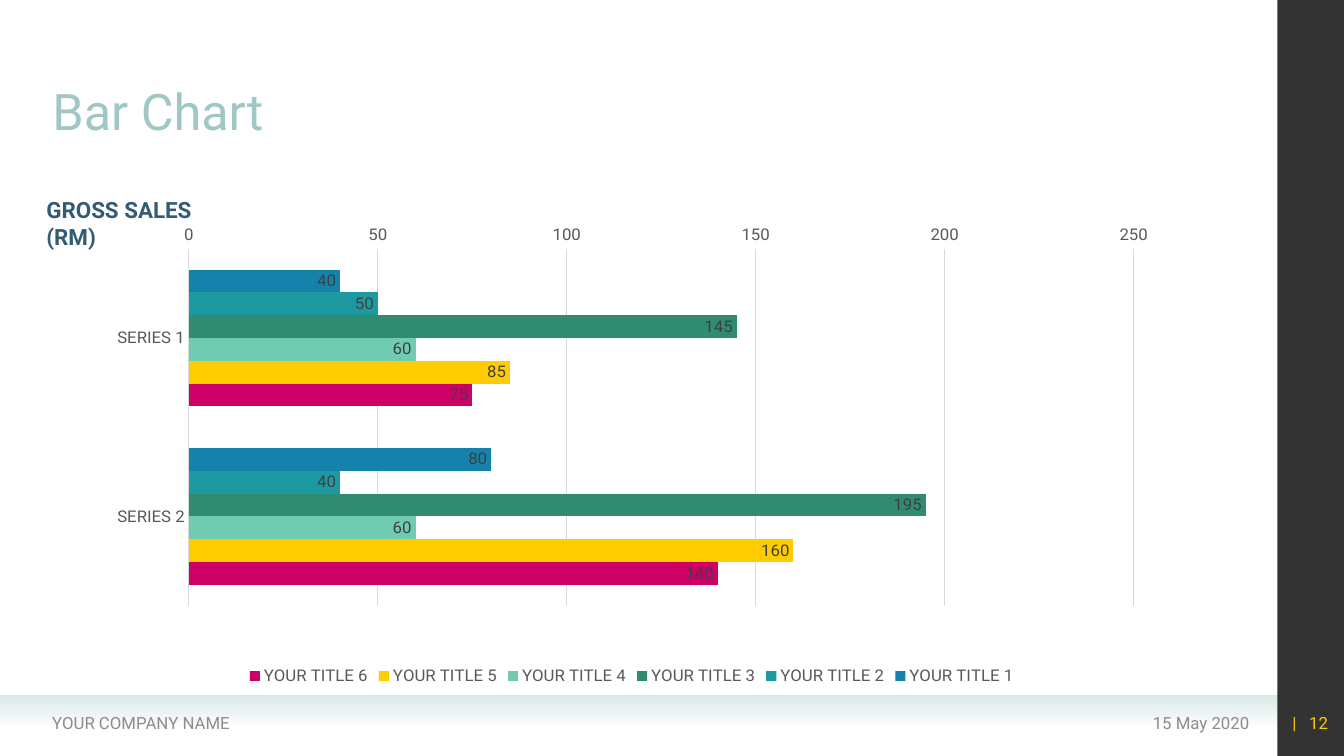
from lxml.etree import SubElement
from pptx import Presentation
from pptx.chart.data import CategoryChartData
from pptx.dml.color import RGBColor
from pptx.enum.chart import (XL_AXIS_CROSSES, XL_CHART_TYPE, XL_LABEL_POSITION,
                             XL_LEGEND_POSITION, XL_TICK_MARK)
from pptx.enum.shapes import MSO_SHAPE
from pptx.enum.text import MSO_ANCHOR, MSO_AUTO_SIZE, PP_ALIGN
from pptx.oxml import parse_xml
from pptx.oxml.ns import nsdecls, qn
from pptx.util import Inches, Pt

COLORS = {
    "title": "A0C7C5", "heading": "335B74", "footer": "8C8C8C", "number": "FFCC00",
    "band": "D9E9E8", "panel": "000000", "grid": "D9D9D9", "axis": "595959", "label": "404040",
}
SALES = {
    "YOUR TITLE 1": ((40, 80), "1482AB"),
    "YOUR TITLE 2": ((50, 40), "1D9AA1"),
    "YOUR TITLE 3": ((145, 195), "318B71"),
    "YOUR TITLE 4": ((60, 60), "70CCB1"),
    "YOUR TITLE 5": ((85, 160), "FFCC00"),
    "YOUR TITLE 6": ((75, 140), "CC0066"),
}
PLOT_AREA = {"x": 0.074, "y": 0.01, "w": 0.909, "h": 0.802}


def apply(target, **values):
    """Set every given attribute on the target."""
    for name, value in values.items():
        setattr(target, name, value)


def set_alpha(fill_element, percent):
    """Make the last colour inside a fill translucent."""
    color = list(fill_element.iter(qn("a:srgbClr")))[-1]
    SubElement(color, qn("a:alpha")).set("val", str(percent * 1000))


class SalesSlide:
    """Holds the style and the slide being built."""

    font_name = "Roboto"

    def __init__(self, deck):
        """Add a title-only slide to the deck."""
        self.slide = deck.slides.add_slide(deck.slide_layouts[5])

    def style(self, font, size, color, bold=False):
        """Give a font the deck's typeface, a size and a colour."""
        apply(font, name=self.font_name, size=Pt(size), bold=bold)
        font.color.rgb = RGBColor.from_string(COLORS[color])

    def rectangle(self, box, color, fade=False, alpha=0):
        """Add a translucent rectangle, solid or fading downwards."""
        rectangle = self.slide.shapes.add_shape(MSO_SHAPE.RECTANGLE, *map(Inches, box))
        rectangle.shadow.inherit = False
        rectangle.line.fill.background()
        rgb = RGBColor.from_string(COLORS[color])
        if fade:
            rectangle.fill.gradient()
            rectangle.fill.gradient_angle = 270
            for stop in rectangle.fill.gradient_stops:
                stop.color.rgb = rgb
        else:
            rectangle.fill.solid()
            rectangle.fill.fore_color.rgb = rgb
        set_alpha(rectangle._element.spPr, alpha)

    def title(self, box, text):
        """Place and format the title placeholder."""
        title = self.slide.shapes.title
        apply(title, **dict(zip(("left", "top", "width", "height"), map(Inches, box))))
        apply(title.text_frame, text=text, word_wrap=True, auto_size=MSO_AUTO_SIZE.NONE,
              vertical_anchor=MSO_ANCHOR.BOTTOM)
        paragraph = title.text_frame.paragraphs[0]
        apply(paragraph, alignment=PP_ALIGN.LEFT, line_spacing=0.9)
        self.style(paragraph.runs[0].font, 36, "title")

    def text(self, box, parts, color, size=12, bold=False, align=PP_ALIGN.LEFT, **frame_format):
        """Add a one-paragraph text box from (text, letter spacing) parts."""
        frame = self.slide.shapes.add_textbox(*map(Inches, box)).text_frame
        apply(frame, **{"word_wrap": True, "vertical_anchor": MSO_ANCHOR.MIDDLE, **frame_format})
        paragraph = frame.paragraphs[0]
        paragraph.alignment = align
        for words, spacing in parts:
            run = paragraph.add_run()
            run.text = words
            self.style(run.font, size, color, bold)
            if spacing:
                run._r.get_or_add_rPr().set("spc", str(spacing * 100))

    def bar_chart(self, box, categories, sales):
        """Add the clustered bar chart with labels and a bottom legend."""
        sales_data = CategoryChartData()
        sales_data.categories = categories
        for name, (values, _) in sales.items():
            sales_data.add_series(name, values)
        chart = self.slide.shapes.add_chart(
            XL_CHART_TYPE.BAR_CLUSTERED, *map(Inches, box), sales_data).chart
        apply(chart, has_title=False, has_legend=True)
        self.style(chart.font, 10, "panel")
        apply(chart.legend, position=XL_LEGEND_POSITION.BOTTOM, include_in_layout=False)
        self.style(chart.legend.font, 12, "axis")
        self.axes(chart)
        self.bars(chart.plots[0], sales)
        self.plot_layout(chart)

    def axes(self, chart):
        """Format both axes and the value gridlines."""
        category_axis, value_axis = chart.category_axis, chart.value_axis
        for axis in (category_axis, value_axis):
            apply(axis, major_tick_mark=XL_TICK_MARK.NONE, minor_tick_mark=XL_TICK_MARK.NONE)
            self.style(axis.tick_labels.font, 12, "axis")
        apply(category_axis, reverse_order=True, crosses=XL_AXIS_CROSSES.MAXIMUM)
        apply(value_axis, minimum_scale=0, maximum_scale=250, major_unit=50,
              has_major_gridlines=True)
        value_axis.format.line.fill.background()
        for line in (category_axis.format.line, value_axis.major_gridlines.format.line):
            line.width = Pt(0.75)
            line.color.rgb = RGBColor.from_string(COLORS["grid"])

    def bars(self, plot, sales):
        """Colour and label each series."""
        apply(plot, gap_width=182, overlap=0, vary_by_categories=False)
        for series, (_, color) in zip(plot.series, sales.values()):
            series.format.fill.solid()
            series.format.fill.fore_color.rgb = RGBColor.from_string(color)
            apply(series.data_labels, show_value=True, position=XL_LABEL_POSITION.INSIDE_END)
            self.style(series.data_labels.font, 12, "label")

    def plot_layout(self, chart):
        """Fix the inner plot area within the chart frame."""
        plot_area = chart._chartSpace.chart.plotArea
        for layout in plot_area.findall(qn("c:layout")):
            plot_area.remove(layout)
        modes = "".join(f'<c:{side}Mode val="edge"/>' for side in "xy")
        sizes = "".join(f'<c:{side} val="{share}"/>' for side, share in PLOT_AREA.items())
        plot_area.insert(0, parse_xml(
            f'<c:layout {nsdecls("c")}><c:manualLayout><c:layoutTarget val="inner"/>'
            f'{modes}{sizes}</c:manualLayout></c:layout>'))


def main():
    """Build and save the slide."""
    deck = Presentation()
    apply(deck, slide_width=Inches(13.33), slide_height=Inches(7.5))
    page = SalesSlide(deck)
    page.rectangle((0, 6.9, 12.67, 0.31), "band", fade=True)
    page.rectangle((12.67, 0, 0.66, 7.5), "panel", alpha=80)
    page.text((9.1, 6.97, 3.39, 0.4), [("15 May 2020", 0)], "footer", align=PP_ALIGN.RIGHT)
    page.text((0.42, 6.97, 4.9, 0.4), [("YOUR COMPANY NAME", 0)], "footer")
    page.text((12.6, 6.97, 0.67, 0.4), [("|", 6), (" 12", 0)], "number", align=PP_ALIGN.RIGHT)
    page.title((0.42, 0.2, 11.21, 1.25), "Bar Chart")
    page.bar_chart((1.11, 2.24, 10.31, 4.6), ("SERIES 1", "SERIES 2"), SALES)
    page.text((0.42, 1.93, 2.02, 0.31), [("GROSS SALES (RM)", 0)], "heading", size=16, bold=True,
              vertical_anchor=MSO_ANCHOR.TOP, margin_left=Inches(0.04), margin_top=Inches(0.02),
              margin_right=Inches(0.04), margin_bottom=Inches(0.02))
    deck.save("out.pptx")


if __name__ == "__main__":
    main()
